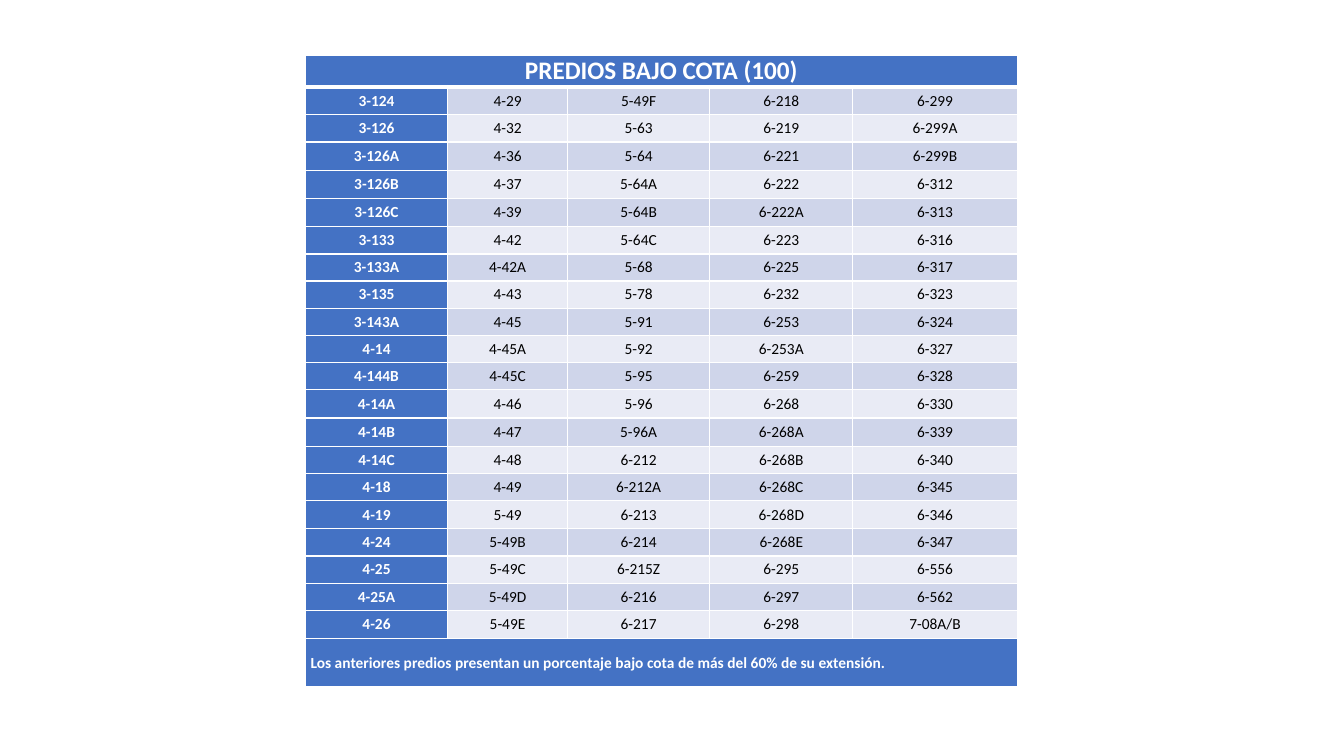
import pptx
import pptx.dml.color
import pptx.enum.text
import pptx.util
from lxml import etree
from pptx.oxml.ns import qn

Inches = pptx.util.Inches
Align = pptx.enum.text.PP_ALIGN
Anchor = pptx.enum.text.MSO_ANCHOR

BLUE, WHITE, BLACK = "4472C4", "FFFFFF", "000000"
BANDS = ["CFD5EA", "E9EBF5"]
HEADING = "PREDIOS BAJO COTA (100)"
FOOTNOTE = "Los anteriores predios presentan un porcentaje bajo cota de más del 60% de su extensión."
LOT_COLUMNS = [
    "3-124 3-126 3-126A 3-126B 3-126C 3-133 3-133A 3-135 3-143A 4-14 "
    "4-144B 4-14A 4-14B 4-14C 4-18 4-19 4-24 4-25 4-25A 4-26",
    "4-29 4-32 4-36 4-37 4-39 4-42 4-42A 4-43 4-45 4-45A "
    "4-45C 4-46 4-47 4-48 4-49 5-49 5-49B 5-49C 5-49D 5-49E",
    "5-49F 5-63 5-64 5-64A 5-64B 5-64C 5-68 5-78 5-91 5-92 "
    "5-95 5-96 5-96A 6-212 6-212A 6-213 6-214 6-215Z 6-216 6-217",
    "6-218 6-219 6-221 6-222 6-222A 6-223 6-225 6-232 6-253 6-253A "
    "6-259 6-268 6-268A 6-268B 6-268C 6-268D 6-268E 6-295 6-297 6-298",
    "6-299 6-299A 6-299B 6-312 6-313 6-316 6-317 6-323 6-324 6-327 "
    "6-328 6-330 6-339 6-340 6-345 6-346 6-347 6-556 6-562 7-08A/B",
]
COLUMN_WIDTHS = [1.41, 1.19, 1.41, 1.42, 1.63]
ROW_HEIGHTS = [0.31, 0.28, 0.27, 0.28, 0.28, 0.28, 0.27, 0.27, 0.27, 0.27, 0.27,
               0.27, 0.28, 0.28, 0.27, 0.27, 0.28, 0.27, 0.27, 0.27, 0.28, 0.48]


def color(hex_value):
    return pptx.dml.color.RGBColor.from_string(hex_value)


def style_cell(cell, fill, top=1, bottom=1):
    cell.margin_left = cell.margin_right = Inches(0.05)
    cell.margin_top = cell.margin_bottom = 0
    cell.vertical_anchor = Anchor.MIDDLE
    properties = cell._tc.get_or_add_tcPr()
    for side, width in (("L", 1), ("R", 1), ("T", top), ("B", bottom)):
        border = etree.SubElement(properties, qn(f"a:ln{side}"), w=str(pptx.util.Pt(width)))
        solid = etree.SubElement(border, qn("a:solidFill"))
        etree.SubElement(solid, qn("a:srgbClr"), val=WHITE)
    cell.fill.solid()
    cell.fill.fore_color.rgb = color(fill)


def write(cell, text, ink=WHITE, bold=True, size=11, align=Align.CENTER):
    paragraph = cell.text_frame.paragraphs[0]
    paragraph.alignment = align
    run = paragraph.add_run()
    run.text = text
    run.font.name = "Calibri"
    run.font.size = pptx.util.Pt(size)
    run.font.bold = bold
    run.font.color.rgb = color(ink)


def add_lots_table(slide, left, top, width, height):
    lots = list(zip(*(column.split() for column in LOT_COLUMNS)))
    footer_row = len(lots) + 1
    table = slide.shapes.add_table(
        len(ROW_HEIGHTS), len(COLUMN_WIDTHS),
        Inches(left), Inches(top), Inches(width), Inches(height)).table
    for column, column_width in zip(table.columns, COLUMN_WIDTHS):
        column.width = Inches(column_width)
    for row, row_height in zip(table.rows, ROW_HEIGHTS):
        row.height = Inches(row_height)

    last_column = len(COLUMN_WIDTHS) - 1
    for row_index in (0, footer_row):
        for cell in table.rows[row_index].cells:
            style_cell(cell, BLUE, bottom=3 if row_index == 0 else 1)
        table.cell(row_index, 0).merge(table.cell(row_index, last_column))
    heading = table.cell(0, 0)
    heading.vertical_anchor = Anchor.BOTTOM
    write(heading, HEADING, size=18)
    write(table.cell(footer_row, 0), FOOTNOTE, align=Align.JUSTIFY)

    for row_index, lot_row in enumerate(lots, 1):
        for column_index, lot in enumerate(lot_row):
            cell = table.cell(row_index, column_index)
            is_first = column_index == 0
            band = BANDS[(row_index - 1) % 2]
            style_cell(cell, BLUE if is_first else band, top=3 if row_index == 1 else 1)
            write(cell, lot, ink=WHITE if is_first else BLACK, bold=is_first)


def main():
    presentation = pptx.Presentation()
    presentation.slide_width = Inches(13.33)
    presentation.slide_height = Inches(7.5)
    slide = presentation.slides.add_slide(presentation.slide_layouts[6])
    add_lots_table(slide, 3.03, 0.55, 7.07, 6.21)
    presentation.save("out.pptx")


if __name__ == "__main__":
    main()
